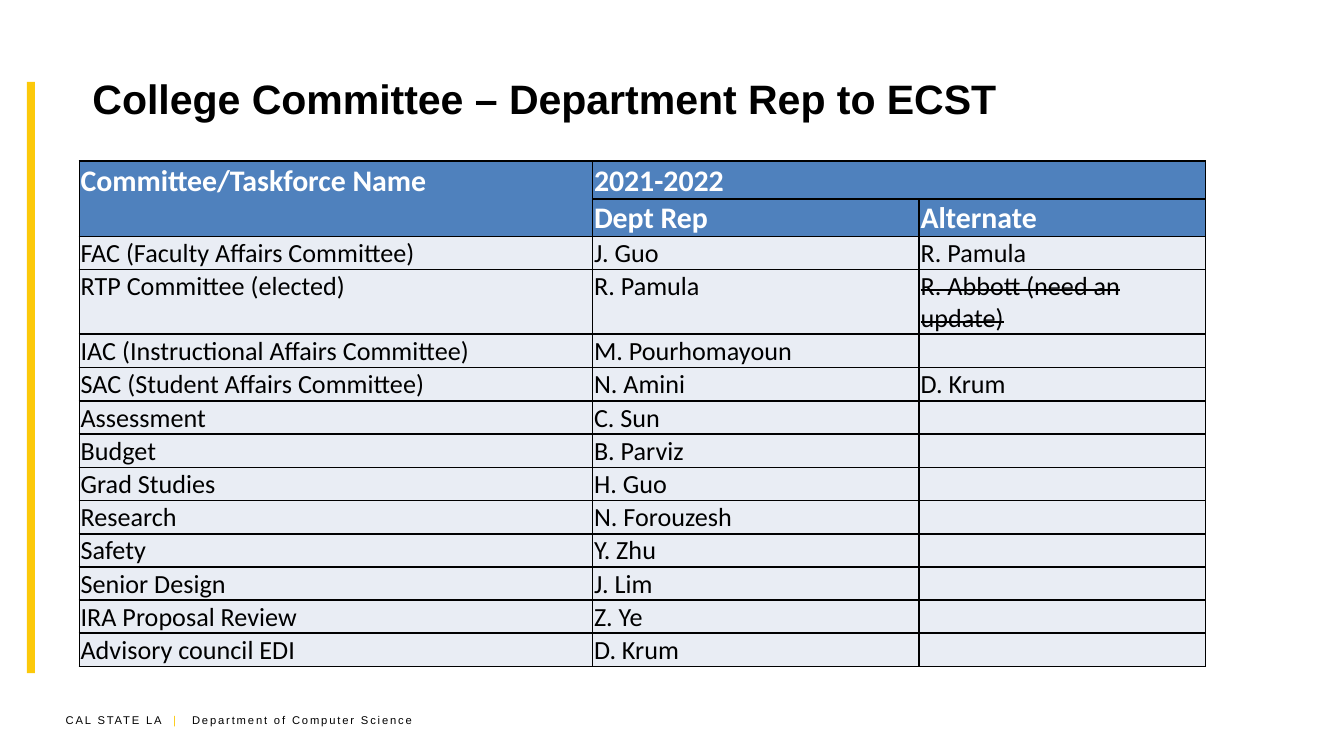
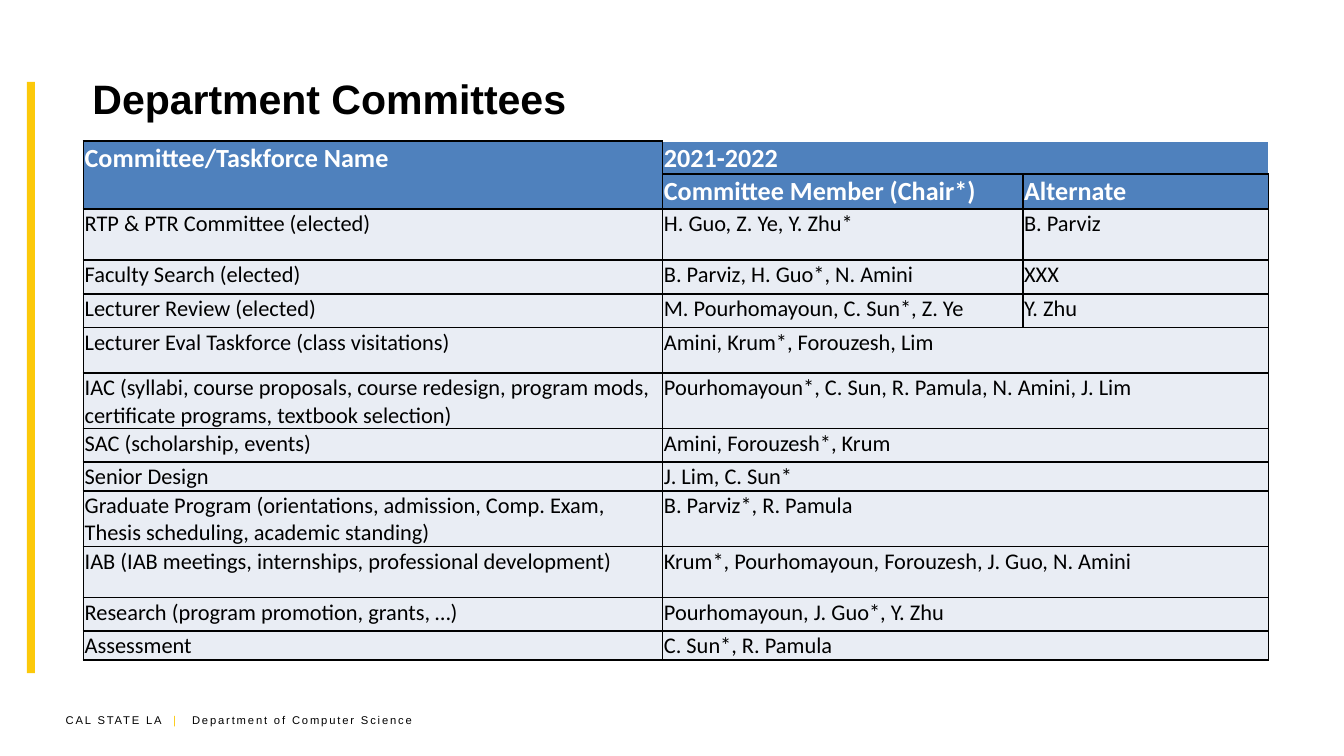
from lxml import etree
from pptx import Presentation
from pptx.dml.color import RGBColor
from pptx.enum.shapes import MSO_SHAPE
from pptx.enum.text import MSO_ANCHOR
from pptx.oxml.ns import qn
from pptx.util import Inches, Pt

RECTANGLE = MSO_SHAPE.RECTANGLE
MIDDLE = MSO_ANCHOR.MIDDLE
COLORS = {
    "ink": "000000",
    "paper": "FFFFFF",
    "gold": "FCC90A",
    "header": "4F81BD",
    "row": "E9EDF4",
}
TITLE_FONT = "Arial"
TABLE_FONT = "Calibri"

BAR_BOX = (0.2, 0.61, 0.06, 4.4)
TITLE_BOX = (0.59, 0.26, 8.9, 0.94)
FOOTER_BOX = (0.39, 5.26, 2.92, 0.2)
FOOTER_TABS = (0.8, 0.94)

COLLEGE_ROWS = [
    ("Committee/Taskforce Name", "2021-2022"),
    ("", "Dept Rep", "Alternate"),
    ("FAC (Faculty Affairs Committee)", "J. Guo", "R. Pamula"),
    ("RTP Committee (elected)", "R. Pamula", "R. Abbott (need an update)"),
    ("IAC (Instructional Affairs Committee)", "M. Pourhomayoun", ""),
    ("SAC (Student Affairs Committee)", "N. Amini", "D. Krum"),
    ("Assessment", "C. Sun", ""),
    ("Budget", "B. Parviz", ""),
    ("Grad Studies", "H. Guo", ""),
    ("Research", "N. Forouzesh", ""),
    ("Safety", "Y. Zhu", ""),
    ("Senior Design", "J. Lim", ""),
    ("IRA Proposal Review", "Z. Ye", ""),
    ("Advisory council EDI", "D. Krum", ""),
]
COLLEGE_HEIGHTS = [0.25, 0.22] + [0.21] * 3 + [0.25] + [0.21] * 8

DEPARTMENT_ROWS = [
    ("Committee/Taskforce Name", "2021-2022"),
    ("", "Committee Member (Chair*)", "Alternate"),
    ("RTP & PTR Committee (elected)", "H. Guo, Z. Ye, Y. Zhu*", "B. Parviz"),
    ("Faculty Search (elected)", "B. Parviz, H. Guo*, N. Amini", "XXX"),
    ("Lecturer Review (elected)", "M. Pourhomayoun, C. Sun*, Z. Ye", "Y. Zhu"),
    ("Lecturer Eval Taskforce (class visitations)", "Amini, Krum*, Forouzesh, Lim"),
    ("IAC (syllabi, course proposals, course redesign, program mods, "
     "certificate programs, textbook selection)",
     "Pourhomayoun*, C. Sun, R. Pamula, N. Amini, J. Lim"),
    ("SAC (scholarship, events)", "Amini, Forouzesh*, Krum"),
    ("Senior Design", "J. Lim, C. Sun*"),
    ("Graduate Program (orientations, admission, Comp. Exam, "
     "Thesis scheduling, academic standing)", "B. Parviz*, R. Pamula"),
    ("IAB (IAB meetings, internships, professional development)",
     "Krum*, Pourhomayoun, Forouzesh, J. Guo, N. Amini"),
    ("Research (program promotion, grants, …)", "Pourhomayoun, J. Guo*, Y. Zhu"),
    ("Assessment", "C. Sun*, R. Pamula"),
]
DEPARTMENT_HEIGHTS = [0.18, 0.26, 0.38, 0.25, 0.25, 0.34, 0.38,
                      0.25, 0.13, 0.38, 0.38, 0.25, 0.13]


def rgb(color):
    return RGBColor.from_string(COLORS[color])


def write(paragraph, text, *, size, font, color="ink", bold=False,
          strike=False, spacing=None):
    """Append a formatted run; empty text only sets the line's size."""
    if not text:
        etree.SubElement(paragraph._p, qn("a:endParaRPr"), sz=str(size * 100))
        return
    run = paragraph.add_run()
    run.text = text
    run.font.size = Pt(size)
    run.font.name = font
    run.font.bold = bold
    run.font.color.rgb = rgb(color)
    if strike:
        run.font._element.set("strike", "sngStrike")
    if spacing:
        run.font._element.set("spc", str(spacing * 100))


def add_text_box(slide, box):
    frame = slide.shapes.add_textbox(*map(Inches, box)).text_frame
    frame.word_wrap = True
    return frame


def add_side_bar(slide, box):
    bar = slide.shapes.add_shape(RECTANGLE, *map(Inches, box))
    bar.shadow.inherit = False
    bar.fill.solid()
    bar.fill.fore_color.rgb = rgb("gold")
    bar.line.fill.background()


def add_title(slide, box, title):
    frame = add_text_box(slide, box)
    frame.vertical_anchor = MIDDLE
    write(frame.paragraphs[0], title, size=22, font=TITLE_FONT, bold=True)


def add_footer(slide, box):
    paragraph = add_text_box(slide, box).paragraphs[0]
    # Tab stops align the divider and the department name
    tabs = etree.SubElement(paragraph._p.get_or_add_pPr(), qn("a:tabLst"))
    for stop in FOOTER_TABS:
        etree.SubElement(tabs, qn("a:tab"), pos=str(Inches(stop)), algn="l")
    for text, color in (("CAL STATE LA\t", "ink"), ("|\t", "gold"),
                        ("Department of Computer Science", "ink")):
        write(paragraph, text, size=6, font=TITLE_FONT, color=color, spacing=1)


def set_borders(cell, white_sides):
    properties = cell._tc.get_or_add_tcPr()
    for side in "LRTB":
        line = etree.SubElement(properties, qn(f"a:ln{side}"), w=str(Pt(1)))
        fill = etree.SubElement(line, qn("a:solidFill"))
        color = COLORS["paper" if side in white_sides else "ink"]
        etree.SubElement(fill, qn("a:srgbClr"), val=color)


def format_cell(cell, fill, white_sides=""):
    cell.margin_left = cell.margin_right = cell.margin_top = Inches(0.01)
    cell.margin_bottom = Inches(0.01) // 3
    set_borders(cell, white_sides)
    cell.fill.solid()
    cell.fill.fore_color.rgb = rgb(fill)


def add_committee_table(slide, box, rows, widths, heights, header_size,
                        body_size, struck=(), year_white_sides=""):
    frame = slide.shapes.add_table(len(rows), len(widths), *map(Inches, box))
    table = frame.table
    table.first_row = table.horz_banding = False
    for column, width in zip(table.columns, widths):
        column.width = Inches(width)
    last = len(widths) - 1

    for r, (texts, height) in enumerate(zip(rows, heights)):
        table.rows[r].height = Inches(height)
        is_header = r < 2
        size = header_size if is_header else body_size
        for c in range(len(widths)):
            text = texts[c] if c < len(texts) else ""
            cell = table.cell(r, c)
            format_cell(cell, "header" if is_header else "row",
                        year_white_sides if r == 0 and c > 0 else "")
            write(cell.text_frame.paragraphs[0], text, size=size,
                  font=TABLE_FONT, color="paper" if is_header else "ink",
                  bold=is_header, strike=text in struck)
        # A row of two texts lets the second one fill the rest
        if len(texts) == 2:
            table.cell(r, 1).merge(table.cell(r, last))
    table.cell(0, 0).merge(table.cell(1, 0))


def add_committee_slide(prs, title, table_box, **table_options):
    slide = prs.slides.add_slide(prs.slide_layouts[6])
    slide.background.fill.solid()
    slide.background.fill.fore_color.rgb = rgb("paper")
    add_footer(slide, FOOTER_BOX)
    add_side_bar(slide, BAR_BOX)
    add_title(slide, TITLE_BOX, title)
    add_committee_table(slide, table_box, **table_options)


def main():
    prs = Presentation()
    # Widescreen, 16:9
    prs.slide_width = Inches(10)
    prs.slide_height = Inches(10) * 9 // 16
    add_committee_slide(
        prs, "College Committee – Department Rep to ECST",
        (0.59, 1.2, 8.38, 3.72), rows=COLLEGE_ROWS,
        widths=(3.82, 2.43, 2.13), heights=COLLEGE_HEIGHTS,
        header_size=16, body_size=14, struck=("R. Abbott (need an update)",))
    add_committee_slide(
        prs, "Department Committees",
        (0.62, 1.05, 8.82, 3.83), rows=DEPARTMENT_ROWS,
        widths=(4.31, 2.68, 1.83), heights=DEPARTMENT_HEIGHTS,
        header_size=14, body_size=12, year_white_sides="TR")
    prs.save("out.pptx")


if __name__ == "__main__":
    main()
